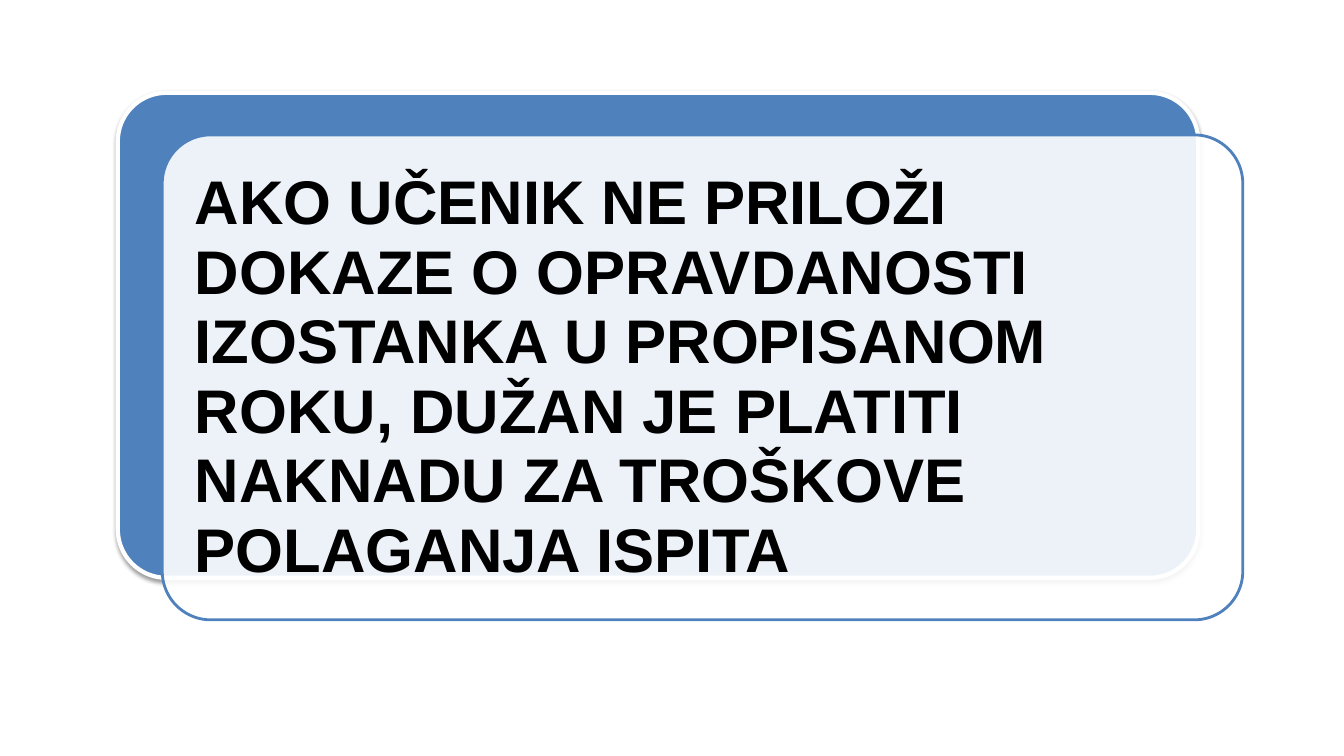
from dataclasses import dataclass

from lxml import etree
from pptx import Presentation
from pptx.dml.color import RGBColor
from pptx.enum.shapes import MSO_SHAPE
from pptx.enum.text import MSO_ANCHOR, PP_ALIGN
from pptx.oxml.ns import qn
from pptx.shapes.autoshape import Shape
from pptx.slide import Slide
from pptx.util import Cm, Pt

ROUNDED = MSO_SHAPE.ROUNDED_RECTANGLE
MIDDLE = MSO_ANCHOR.MIDDLE
LEFT = PP_ALIGN.LEFT

BLUE = "4F81BD"
WHITE = "FFFFFF"
BLACK = "000000"
CARD_WIDTH = 27.23
CARD_HEIGHT = 12.22
NOTICE = (
    "AKO UČENIK NE PRILOŽI DOKAZE O OPRAVDANOSTI IZOSTANKA U PROPISANOM "
    "ROKU, DUŽAN JE PLATITI NAKNADU ZA TROŠKOVE POLAGANJA ISPITA"
)


@dataclass
class Card:
    left: float
    top: float
    fill: str
    opacity: int
    line: str
    line_width: float
    shadowed: bool


CARDS = [
    Card(2.97, 2.34, BLUE, 100, WHITE, 3, True),
    Card(4.09, 3.4, WHITE, 90, BLUE, 2, False),
]


def colour(value: str) -> RGBColor:
    return RGBColor.from_string(value)


def set_opacity(shape: Shape, percent: int) -> None:
    tint = shape.fill._xPr.find(f"{qn('a:solidFill')}/{qn('a:srgbClr')}")
    etree.SubElement(tint, qn("a:alpha"), val=str(percent * 1000))


def add_shadow(shape: Shape) -> None:
    effects = shape.element.spPr.find(qn("a:effectLst"))
    shadow = etree.SubElement(
        effects, qn("a:outerShdw"), blurRad=str(Pt(3.1)), dist=str(Pt(1.6)),
        dir=str(90 * 60000), rotWithShape="0",
    )
    tint = etree.SubElement(shadow, qn("a:srgbClr"), val=BLACK)
    etree.SubElement(tint, qn("a:alpha"), val=str(38 * 1000))


def draw_card(page: Slide, card: Card) -> None:
    shape = page.shapes.add_shape(
        ROUNDED, Cm(card.left), Cm(card.top), Cm(CARD_WIDTH), Cm(CARD_HEIGHT)
    )
    shape.adjustments[0] = 0.1
    shape.fill.solid()
    shape.fill.fore_color.rgb = colour(card.fill)
    shape.line.color.rgb = colour(card.line)
    shape.line.width = Pt(card.line_width)
    shape.shadow.inherit = False
    if card.opacity < 100:
        set_opacity(shape, card.opacity)
    if card.shadowed:
        add_shadow(shape)


def draw_notice(page: Slide) -> None:
    box = page.shapes.add_textbox(Cm(4.45), Cm(3.76), Cm(26.49), Cm(11.51))
    frame = box.text_frame
    frame.word_wrap = True
    frame.vertical_anchor = MIDDLE
    frame.margin_left = frame.margin_right = Cm(0.46)
    frame.margin_top = frame.margin_bottom = Cm(0.46)
    para = frame.paragraphs[0]
    para.alignment = LEFT
    para.line_spacing = 0.94
    span = para.add_run()
    span.text = NOTICE
    span.font.name = "Arial"
    span.font.size = Pt(44)
    span.font.bold = True
    span.font.color.rgb = colour(BLACK)


def main() -> None:
    deck = Presentation()
    deck.slide_width = Cm(33.87)
    deck.slide_height = Cm(19.05)
    page = deck.slides.add_slide(deck.slide_layouts[6])
    for card in CARDS:
        draw_card(page, card)
    draw_notice(page)
    deck.save("out.pptx")


if __name__ == "__main__":
    main()
